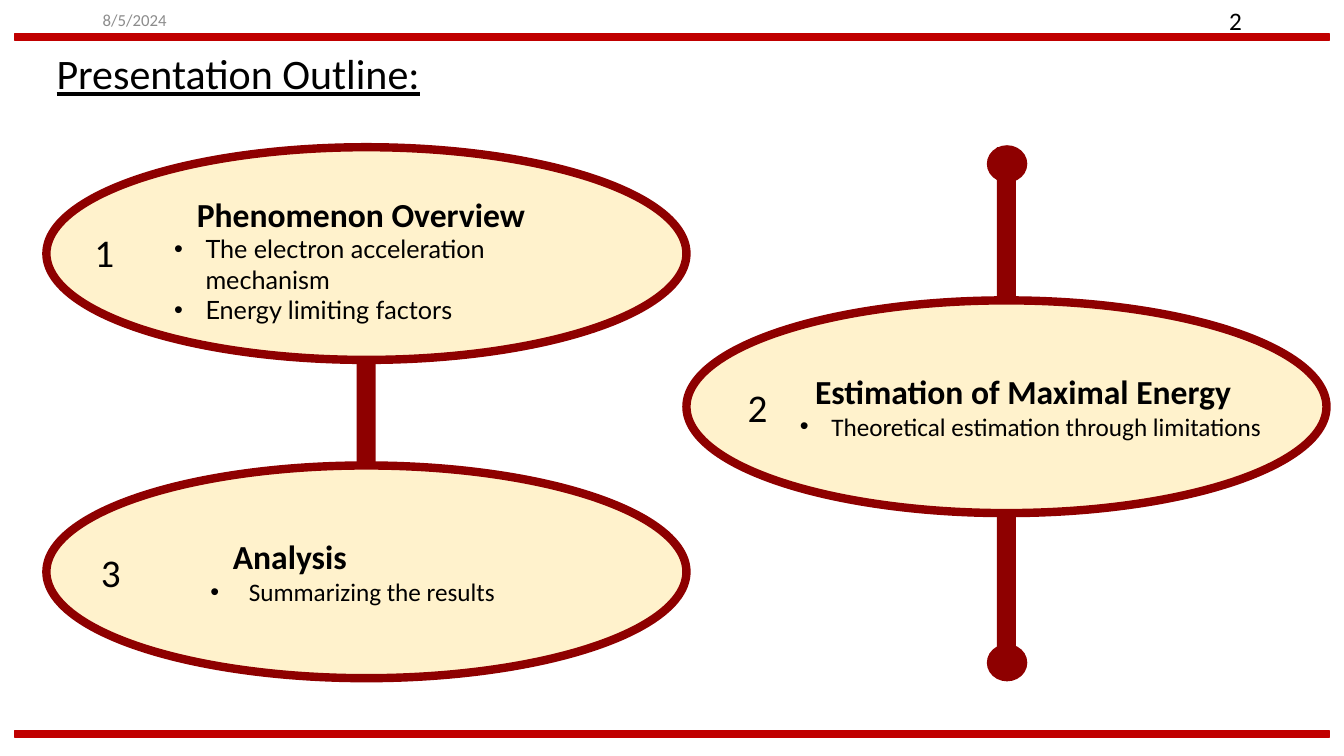
from pptx import Presentation
from pptx.dml.color import RGBColor
from pptx.enum.shapes import MSO_SHAPE
from pptx.enum.text import MSO_ANCHOR, MSO_AUTO_SIZE, PP_ALIGN
from pptx.oxml.ns import qn
from pptx.util import Cm, Pt
from lxml.etree import SubElement

RED = RGBColor(0xC0, 0x00, 0x00)
MAROON = RGBColor(0x8E, 0x00, 0x00)
CREAM = RGBColor(0xFF, 0xF2, 0xCC)
GREY = RGBColor(0x8C, 0x8C, 0x8C)
BLACK = RGBColor(0, 0, 0)

deck = Presentation()
deck.slide_width, deck.slide_height = Cm(33.87), Cm(19.05)
slide = deck.slides.add_slide(deck.slide_layouts[5])


def draw(kind, box, fill, line=None, width=0):
    shape = slide.shapes.add_shape(kind, *map(Cm, box))
    shape.shadow.inherit = False
    shape.fill.solid()
    shape.fill.fore_color.rgb = fill
    if line is None:
        shape.line.fill.background()
    else:
        shape.line.color.rgb = line
        shape.line.width = Pt(width)


def write(para, text, **style):
    para.text = text
    look = {"name": "Calibri", "size": Pt(18)} | style
    tint = look.pop("color", BLACK)
    for key, value in look.items():
        setattr(para.font, key, value)
    para.font.color.rgb = tint


# Title
title = slide.shapes.title
spot = {"left": 1.17, "top": 1.07, "width": 9.75, "height": 1.55}
for key, value in spot.items():
    setattr(title, key, Cm(value))
frame = title.text_frame
frame.auto_size = MSO_AUTO_SIZE.NONE
frame.word_wrap = False
frame.vertical_anchor = MSO_ANCHOR.TOP
write(frame.paragraphs[0], "Presentation Outline:", size=Pt(30), underline=True)
frame.paragraphs[0].alignment = PP_ALIGN.LEFT

# Header and footer bars
for top in (0.86, 18.42):
    draw(MSO_SHAPE.RECTANGLE, (0.36, top, 33.15, 0.15), RED, RED, 1)

# Date and page number
for left, text, size, tint, align in (
    (2.34, "8/5/2024", 12, GREY, PP_ALIGN.LEFT),
    (23.93, "2", 18, BLACK, PP_ALIGN.RIGHT),
):
    frame = slide.shapes.add_textbox(Cm(left), 0, Cm(7.62), Cm(1.02)).text_frame
    frame.word_wrap = True
    frame.vertical_anchor = MSO_ANCHOR.MIDDLE
    write(frame.paragraphs[0], text, size=Pt(size), color=tint)
    frame.paragraphs[0].alignment = align

# Links and end knobs
for box in ((25.12, 3.71, 0.48, 13.39), (8.99, 9.07, 0.48, 2.67)):
    draw(MSO_SHAPE.RECTANGLE, box, MAROON)
for top in (3.66, 16.23):
    draw(MSO_SHAPE.OVAL, (24.87, top, 1.02, 0.94), MAROON)

# Topics: oval corner, number corner, text box, heading indent, bullet indent
topics = [
    ((1.17, 3.71), (2.13, 5.64), (4.14, 4.75, 11.33, 2.82), 0.57, 0.79, "Lato",
     "Phenomenon Overview",
     ["The electron acceleration mechanism", "Energy limiting factors"]),
    ((17.3, 7.57), (18.59, 9.53), (19.91, 9.22, 12.17, 2.06), 0.38, 0.79, "Calibri",
     "Estimation of Maximal Energy",
     ["Theoretical estimation through limitations"]),
    ((1.17, 11.73), (2.29, 13.69), (5.05, 13.39, 9.4, 2.06), 0.57, 0.97, "Calibri",
     "Analysis", ["Summarizing the results"]),
]
for num, (oval, mark, box, inset, hang, face, head, points) in enumerate(topics, 1):
    draw(MSO_SHAPE.OVAL, (*oval, 16.13, 5.36), CREAM, MAROON, 6)
    label = slide.shapes.add_textbox(*map(Cm, (*mark, 1.02, 1.45)))
    write(label.text_frame.paragraphs[0], str(num), size=Pt(28))

    frame = slide.shapes.add_textbox(*map(Cm, box)).text_frame
    frame.word_wrap = True
    para = frame.paragraphs[0]
    para._p.get_or_add_pPr().set("marL", str(Cm(inset)))
    write(para, head, size=Pt(24), bold=True)
    for point in points:
        para = frame.add_paragraph()
        props = para._p.get_or_add_pPr()
        props.set("marL", str(Cm(hang)))
        props.set("indent", str(-Cm(hang)))
        SubElement(props, qn("a:buFont"), typeface="Arial")
        SubElement(props, qn("a:buChar"), char="•")
        write(para, point, name=face)

deck.save("out.pptx")
